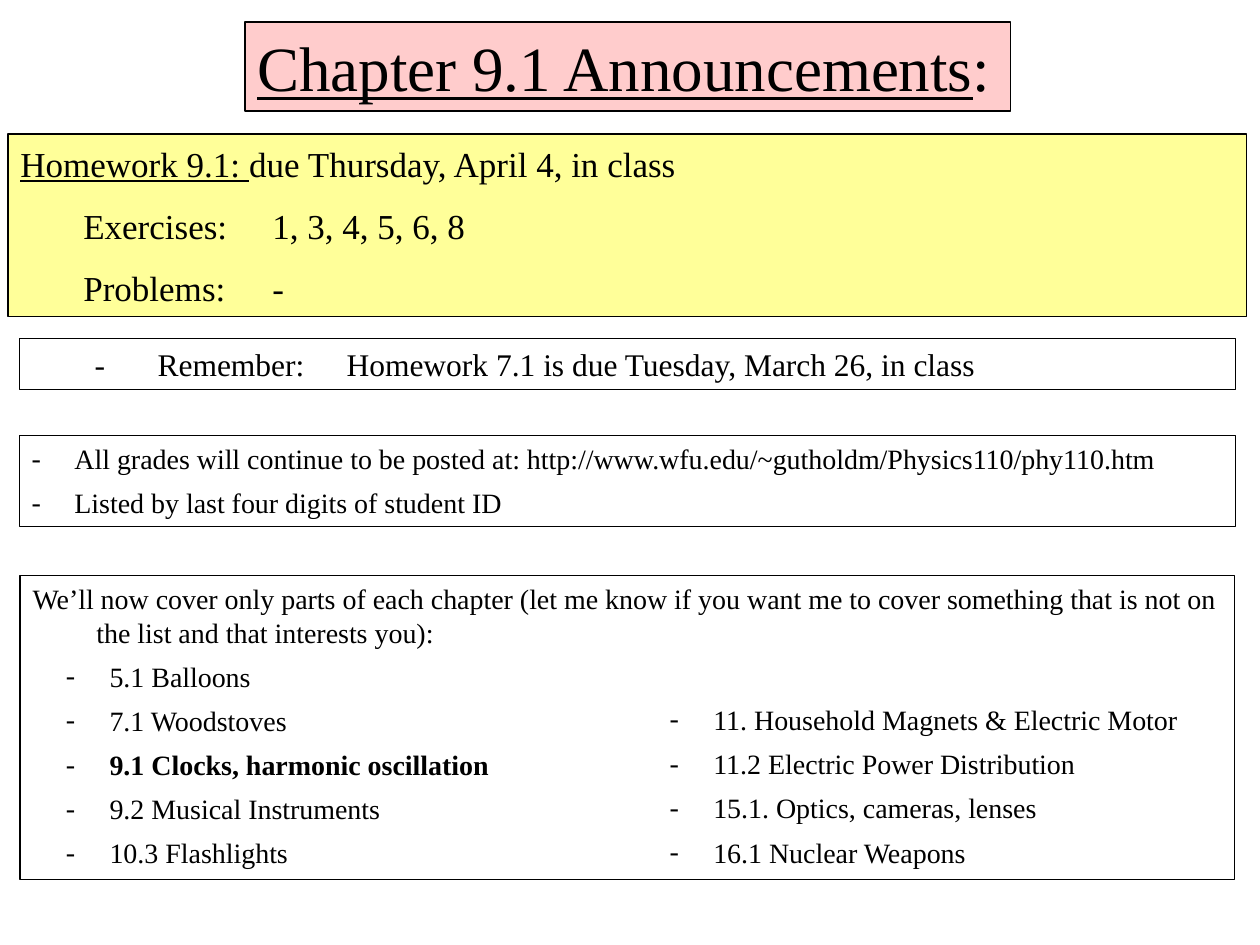
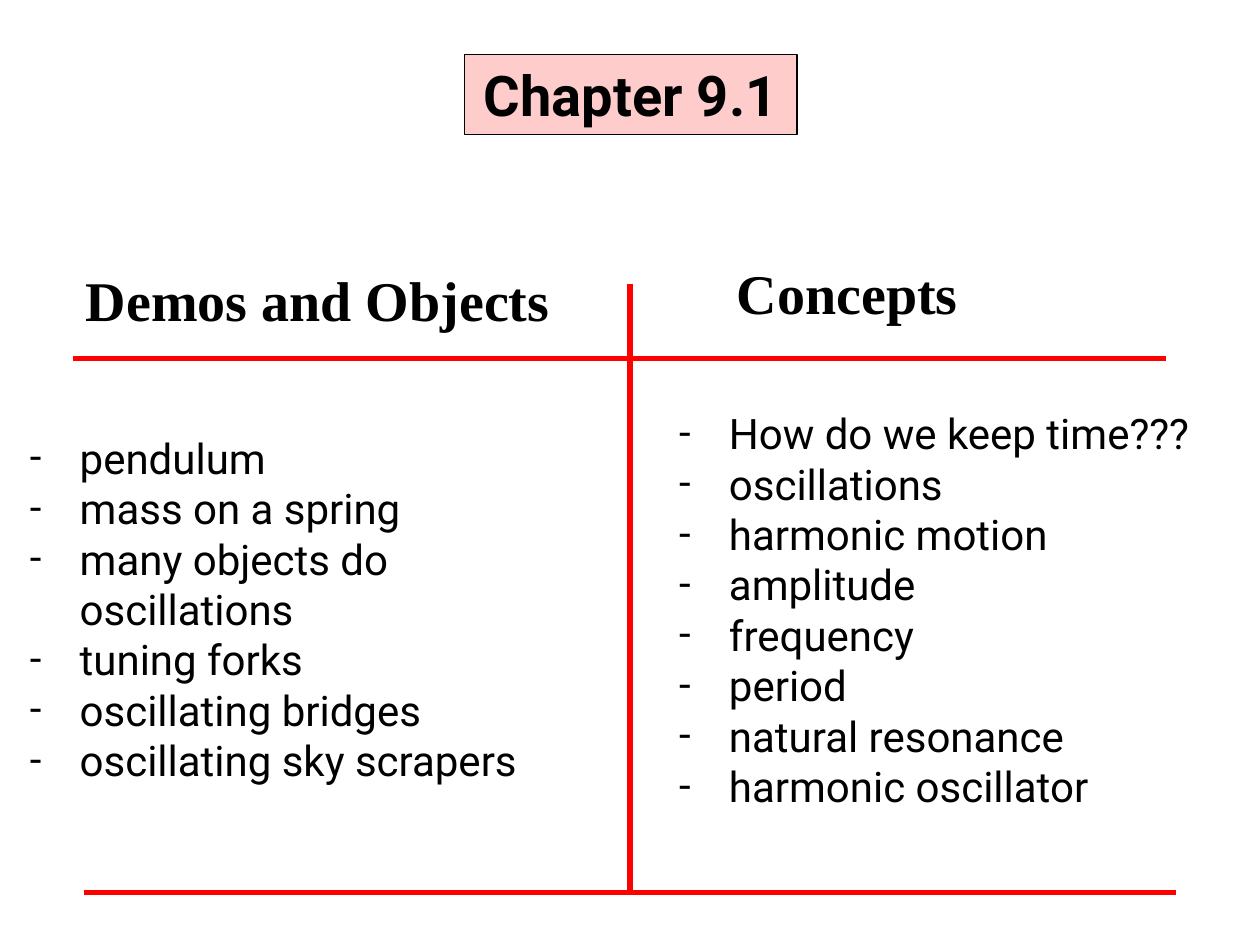
"""Build the two Chapter 9.1 slides: announcements and topic overview."""
import pptx
import pptx.dml.color
import pptx.enum.shapes
import pptx.enum.text
import pptx.oxml.ns
import pptx.util
from lxml import etree

Pt = pptx.util.Pt
ALIGN = pptx.enum.text.PP_ALIGN
ANCHOR = pptx.enum.text.MSO_ANCHOR
SERIF, SANS = "Times New Roman", "Roboto"
HUES = {"ink": "000000", "paper": "FFFFFF", "title": "FFCCCC",
        "task": "FFFF99", "rule": "FF0000"}


def hue(name):
    return pptx.dml.color.RGBColor.from_string(HUES[name])


def node(parent, tag, **attrs):
    return etree.SubElement(parent, pptx.oxml.ns.qn(tag), **attrs)


class Deck:
    def __init__(self):
        self.prs = pptx.Presentation()
        self.prs.slide_width, self.prs.slide_height = Pt(720), Pt(540)
        self.slide = None

    def page(self):
        self.slide = self.prs.slides.add_slide(self.prs.slide_layouts[6])

    def frame(self, shape, anchor=ANCHOR.TOP):
        frame = shape.text_frame
        frame.word_wrap = True
        frame.vertical_anchor = anchor
        return frame

    def text(self, x, y, w, h):
        return self.frame(self.slide.shapes.add_textbox(Pt(x), Pt(y), Pt(w), Pt(h)))

    def box(self, x, y, w, h, fill="paper", anchor=ANCHOR.TOP):
        shape = self.slide.shapes.add_shape(
            pptx.enum.shapes.MSO_SHAPE.RECTANGLE, Pt(x), Pt(y), Pt(w), Pt(h))
        shape.shadow.inherit = False
        shape.fill.solid()
        shape.fill.fore_color.rgb = hue(fill)
        shape.line.color.rgb = hue("ink")
        shape.line.width = Pt(0.75)
        return self.frame(shape, anchor)

    def para(self, frame, runs, size, font=SERIF, bold=False, align=ALIGN.LEFT,
             before=0, after=0, left=0, hang=0, dash=False, tabs=()):
        first = frame.paragraphs[0]
        fresh = not first.runs
        para = first if fresh else frame.add_paragraph()
        props = para._p.get_or_add_pPr()
        props.set("marL", str(Pt(left)))
        props.set("indent", str(-Pt(hang)))
        if dash:
            node(props, "a:buFont", typeface=font)
            node(props, "a:buChar", char="-")
        else:
            node(props, "a:buNone")
        if tabs:
            stops = node(props, "a:tabLst")
            for stop in tabs:
                node(stops, "a:tab", pos=str(Pt(stop)), algn="l")
        para.alignment = align
        para.space_before = Pt(0 if fresh else before)
        para.space_after = Pt(after)
        for words, line in runs:
            run = para.add_run()
            run.text = words
            run.font.name = font
            run.font.size = Pt(size)
            run.font.bold = bold
            run.font.underline = line
            run.font.color.rgb = hue("ink")

    def plain(self, frame, words, size, **style):
        self.para(frame, [(words, False)], size, **style)

    def list(self, frame, items, size, strong=None, **style):
        for item in items:
            self.plain(frame, item, size, dash=True, bold=item == strong, **style)

    def rule(self, x, y, end, base):
        line = self.slide.shapes.add_connector(
            pptx.enum.shapes.MSO_CONNECTOR.STRAIGHT, Pt(x), Pt(y), Pt(end), Pt(base))
        line.line.color.rgb = hue("rule")
        line.line.width = Pt(3)
        node(line._element.spPr, "a:effectLst")

    def save(self):
        self.prs.save("out.pptx")


def news(deck):
    deck.page()
    title = deck.box(140, 12.5, 437.5, 51, "title", ANCHOR.MIDDLE)
    deck.para(title, [("Chapter 9.1 Announcements", True), (":", False)], 36)

    task = deck.box(4.5, 76.5, 708, 104.5, "task", ANCHOR.MIDDLE)
    deck.para(task, [("Homework 9.1: ", True),
                     ("due Thursday, April 4, in class", False)], 20)
    for words in ("\tExercises:\t1, 3, 4, 5, 6, 8", "\tProblems:\t-"):
        deck.plain(task, words, 20, before=11.5, tabs=(144, 236))

    due = deck.box(11, 193.5, 695, 29)
    deck.plain(due, "\t-\tRemember:\tHomework 7.1 is due Tuesday, March 26, in class",
               18, tabs=(5, 19.5, 112))

    grades = deck.box(11, 249, 695, 52)
    deck.list(grades, [
        "All grades will continue to be posted at: "
        "http://www.wfu.edu/~gutholdm/Physics110/phy110.htm",
        "Listed by last four digits of student ID",
    ], 16, after=6, left=24.5, hang=24.5)

    plan = deck.box(11.5, 329, 694, 173.5)
    deck.plain(plan, "We’ll now cover only parts of each chapter (let me know if you want "
               "me to cover something that is not on the list and that interests you):",
               16, after=6, left=36.5, hang=36.5)
    inset = dict(after=6, left=44, hang=25)
    focus = "9.1 Clocks, harmonic oscillation"
    deck.list(plan, ["5.1 Balloons", "7.1 Woodstoves", focus,
                     "9.2 Musical Instruments", "10.3 Flashlights"],
              16, strong=focus, **inset)
    later = deck.text(356.5, 398, 363.5, 104)
    deck.list(later, ["11. Household Magnets & Electric Motor",
                      "11.2 Electric Power Distribution",
                      "15.1. Optics, cameras, lenses",
                      "16.1 Nuclear Weapons"], 16, **inset)


def topics(deck):
    deck.page()
    title = deck.box(265.5, 31, 190, 46, "title", ANCHOR.MIDDLE)
    deck.plain(title, "Chapter 9.1", 32, font=SANS, bold=True, align=ALIGN.CENTER)

    for x, y, end, base in ((48, 510, 672, 510), (42, 205, 666, 205),
                            (360, 162, 360, 510)):
        deck.rule(x, y, end, base)

    for words, x, y, w in (("Demos and Objects", 42, 148, 289.5),
                           ("Concepts", 414, 144, 155)):
        deck.plain(deck.text(x, y, w, 45), words, 32, bold=True)

    demos = ["pendulum", "mass on a spring", "many objects do oscillations",
             "tuning forks", "oscillating bridges", "oscillating sky scrapers"]
    ideas = ["How do we keep time???", "oscillations", "harmonic motion", "amplitude",
             "frequency", "period", "natural resonance", "harmonic oscillator"]
    for items, x, y, w, h in ((demos, 10, 243.5, 337.5, 180),
                              (ideas, 381, 229.5, 310.5, 237.5)):
        deck.list(deck.text(x, y, w, h), items, 24, font=SANS, left=28.5, hang=28.5)


def main():
    deck = Deck()
    news(deck)
    topics(deck)
    deck.save()


if __name__ == "__main__":
    main()
